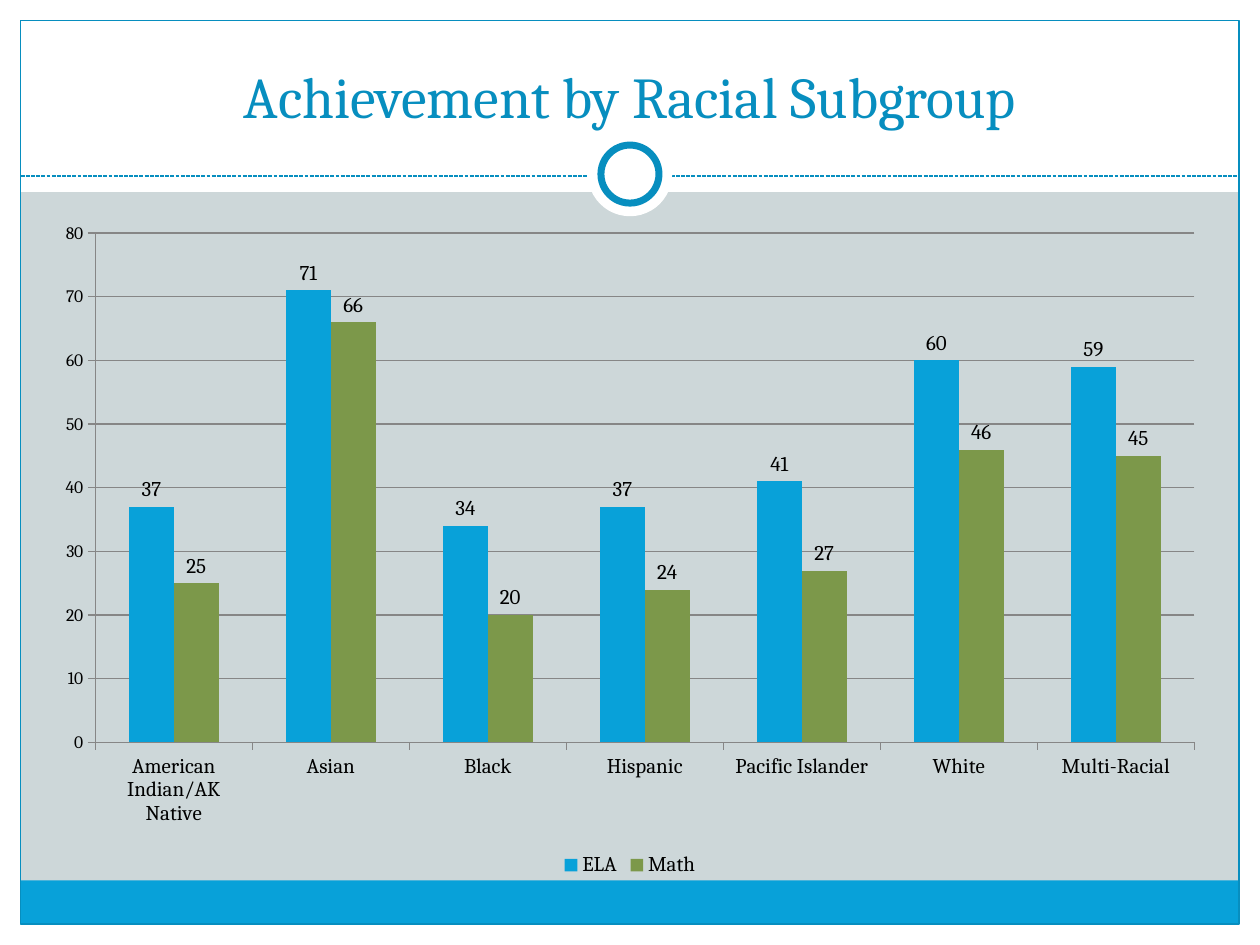
import pptx
import pptx.chart.data
import pptx.dml.color
import pptx.enum.chart
import pptx.enum.dml
import pptx.enum.shapes
import pptx.enum.text
import pptx.oxml
import pptx.util
from pptx.util import Cm

FONT = "Cambria"
WHITE, BLUE, DARK_BLUE, GREEN = "FFFFFF", "08A1D9", "078EBF", "7C984A"
BACKGROUND, BLACK, GRID = "CDD7D9", "000000", "868686"
WIDTH, HEIGHT, MARGIN = 25.4, 19.05, 0.42
RULE_TOP = 3.55
CATEGORIES = ["American Indian/AK Native", "Asian", "Black", "Hispanic",
              "Pacific Islander", "White", "Multi-Racial"]
SERIES = [("ELA", [37, 71, 34, 37, 41, 60, 59], BLUE),
          ("Math", [25, 66, 20, 24, 27, 46, 45], GREEN)]


def color(value):
    return pptx.dml.color.RGBColor.from_string(value)


class SlideBuilder:
    """Draws styled elements on the current slide."""

    def __init__(self, presentation):
        self.slide = presentation.slides.add_slide(presentation.slide_layouts[5])
        fill = self.slide.background.fill
        fill.solid()
        fill.fore_color.rgb = color(BACKGROUND)

    def set_font(self, font, size, font_color=BLACK):
        font.name = FONT
        font.size = pptx.util.Pt(size)
        font.color.rgb = color(font_color)

    def set_line(self, line, line_color, width):
        line.color.rgb = color(line_color)
        line.width = pptx.util.Pt(width)

    def shape(self, left, top, width, height, fill=None, line=None,
              line_width=0.75, kind="RECTANGLE"):
        shape = self.slide.shapes.add_shape(
            pptx.enum.shapes.MSO_SHAPE[kind], Cm(left), Cm(top), Cm(width), Cm(height))
        shape.shadow.inherit = False
        if fill:
            shape.fill.solid()
            shape.fill.fore_color.rgb = color(fill)
        else:
            shape.fill.background()
        if line:
            self.set_line(shape.line, line, line_width)
        else:
            shape.line.fill.background()

    def circle(self, diameter, center_top, **style):
        self.shape((WIDTH - diameter) / 2, center_top - diameter / 2,
                   diameter, diameter, kind="OVAL", **style)

    def dashed_rule(self, left, right, top):
        connector = self.slide.shapes.add_connector(
            pptx.enum.shapes.MSO_CONNECTOR.STRAIGHT, Cm(left), Cm(top), Cm(right), Cm(top))
        self.set_line(connector.line, DARK_BLUE, 0.75)
        connector.line.dash_style = pptx.enum.dml.MSO_LINE.SQUARE_DOT
        properties = connector._element.spPr
        properties.append(pptx.oxml.parse_xml(
            '<a:effectLst xmlns:a="http://schemas.openxmlformats.org/drawingml/2006/main"/>'))

    def title(self, text, left, top, width, height):
        title = self.slide.shapes.title
        title.left, title.top = Cm(left), Cm(top)
        title.width, title.height = Cm(width), Cm(height)
        title.text_frame.vertical_anchor = pptx.enum.text.MSO_ANCHOR.BOTTOM
        paragraph = title.text_frame.paragraphs[0]
        paragraph.alignment = pptx.enum.text.PP_ALIGN.CENTER
        run = paragraph.add_run()
        run.text = text
        self.set_font(run.font, 33, DARK_BLUE)
        title._element.getparent().append(title._element)

    def column_chart(self, categories, series, left, top, width, height):
        data = pptx.chart.data.CategoryChartData(number_format="0")
        data.categories = categories
        for name, values, _ in series:
            data.add_series(name, values)
        chart = self.slide.shapes.add_chart(
            pptx.enum.chart.XL_CHART_TYPE.COLUMN_CLUSTERED,
            Cm(left), Cm(top), Cm(width), Cm(height), data).chart
        chart.has_title = False
        self.set_font(chart.font, 10)
        chart.has_legend = True
        chart.legend.position = pptx.enum.chart.XL_LEGEND_POSITION.BOTTOM
        chart.legend.include_in_layout = False
        self.set_font(chart.legend.font, 12)

        for axis, size in ((chart.category_axis, 12), (chart.value_axis, 10)):
            self.set_font(axis.tick_labels.font, size)
            self.set_line(axis.format.line, GRID, 0.75)
            axis.major_tick_mark = pptx.enum.chart.XL_TICK_MARK.OUTSIDE
        value_axis = chart.value_axis
        value_axis.minimum_scale, value_axis.maximum_scale = 0, 80
        value_axis.major_unit = 10
        self.set_line(value_axis.major_gridlines.format.line, GRID, 0.75)

        plot = chart.plots[0]
        plot.gap_width, plot.overlap = 150, 0
        plot.vary_by_categories = False
        for column, (_, _, fill) in zip(plot.series, series):
            column.format.fill.solid()
            column.format.fill.fore_color.rgb = color(fill)
            labels = column.data_labels
            labels.show_value = True
            labels.number_format = "0"
            labels.number_format_is_linked = False
            labels.position = pptx.enum.chart.XL_LABEL_POSITION.OUTSIDE_END
            self.set_font(labels.font, 12)


def main():
    presentation = pptx.Presentation()
    presentation.slide_width, presentation.slide_height = Cm(WIDTH), Cm(HEIGHT)
    builder = SlideBuilder(presentation)
    inner_width, inner_height = WIDTH - 2 * MARGIN, HEIGHT - 2 * MARGIN

    for box in ((0, HEIGHT - MARGIN, WIDTH, MARGIN), (0, 0, WIDTH, 3.87),
                (0, 0, MARGIN, HEIGHT), (WIDTH - MARGIN, 0, MARGIN, HEIGHT)):
        builder.shape(*box, fill=WHITE)
    builder.shape(MARGIN, 17.75, inner_width, 0.87, fill=BLUE)
    builder.shape(MARGIN, MARGIN, inner_width, inner_height, line=DARK_BLUE)
    builder.dashed_rule(MARGIN, WIDTH - MARGIN, RULE_TOP)
    builder.circle(1.7, 3.51, fill=WHITE)
    builder.circle(1.17, 3.51, fill=WHITE, line=DARK_BLUE, line_width=4)
    builder.title("Achievement by Racial Subgroup", 0.85, 0.64, 23.7, 2.11)
    builder.column_chart(CATEGORIES, SERIES, 0.85, 4.23, 23.7, 13.55)
    presentation.save("out.pptx")


if __name__ == "__main__":
    main()
